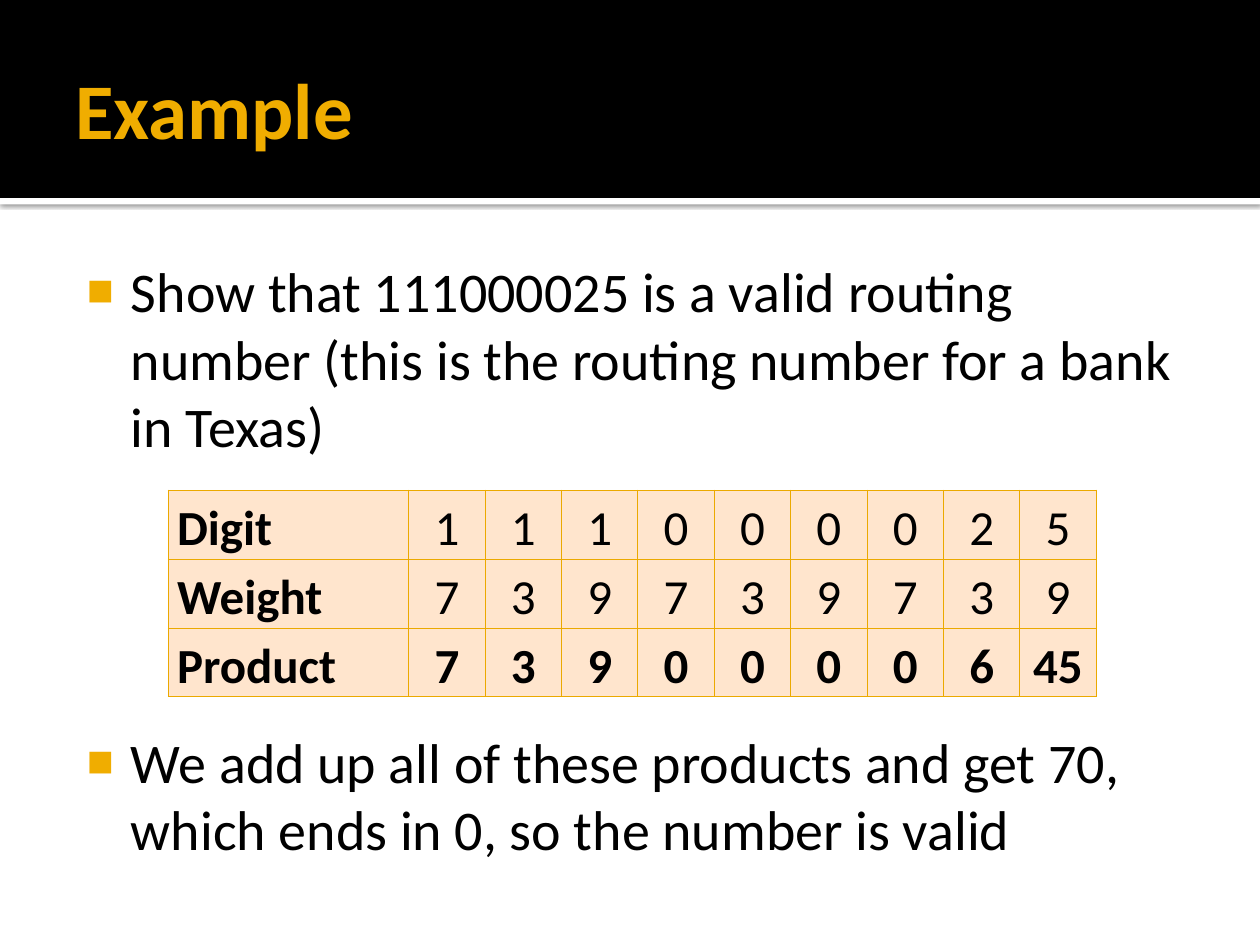
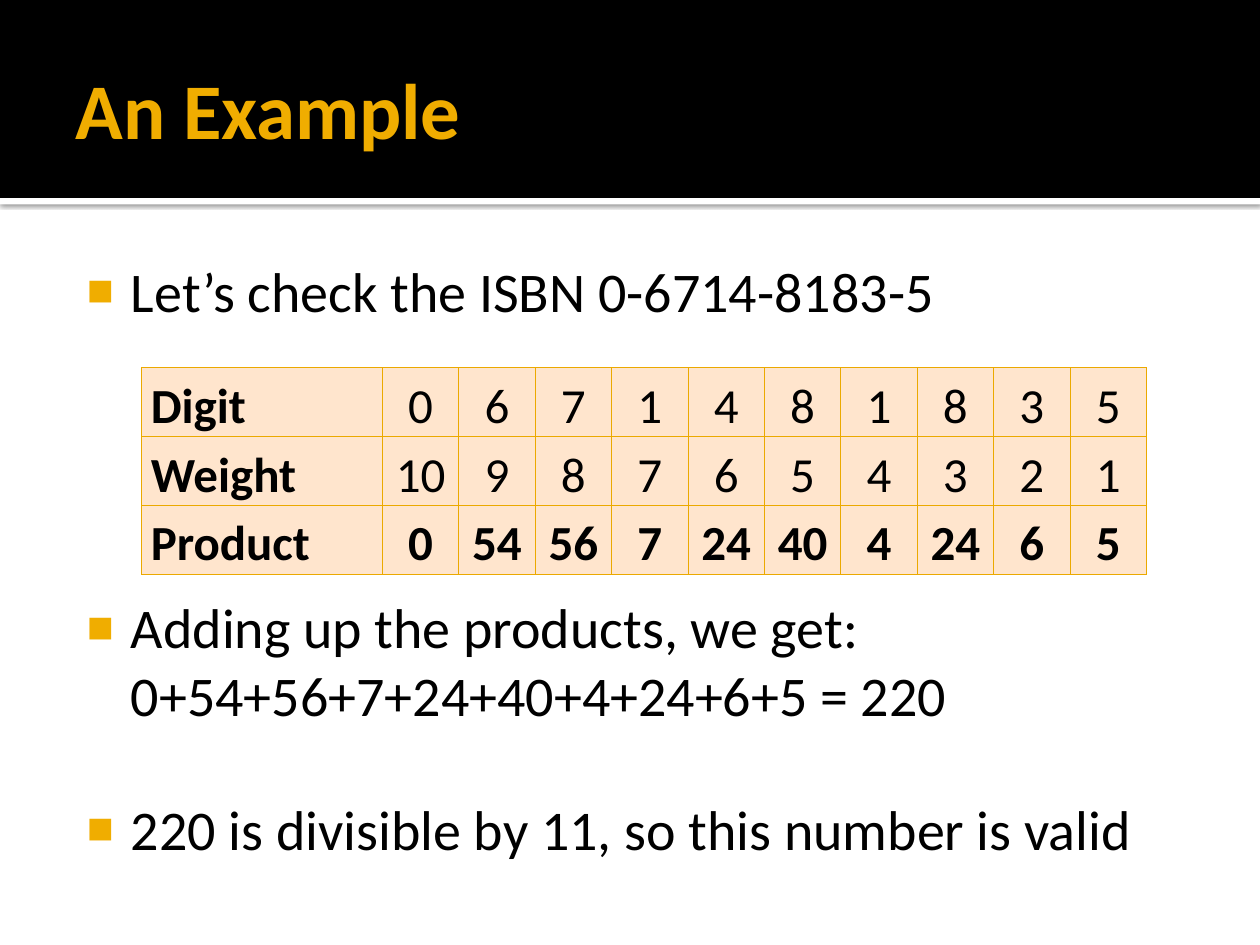
from lxml.etree import SubElement
from pptx import Presentation
from pptx.dml.color import RGBColor
from pptx.enum.shapes import MSO_SHAPE as Preset
from pptx.enum.text import MSO_ANCHOR as Anchor, MSO_AUTO_SIZE as AutoSize, PP_ALIGN as Align
from pptx.oxml.ns import qn
from pptx.util import Cm, Pt

EXAMPLES = [
    {
        "title": "Example",
        "points": [
            ("Show that 111000025 is a valid routing number "
             "(this is the routing number for a bank in Texas)", 0),
            ("We add up all of these products and get 70, "
             "which ends in 0, so the number is valid", 4),
        ],
        "digits": [1, 1, 1, 0, 0, 0, 0, 2, 5],
        "weights": [7, 3, 9] * 3,
        "table_at": (3.39, 9.88),
    },
    {
        "title": "An Example",
        "points": [
            ("Let’s check the ISBN 0-6714-8183-5", 0),
            ("Adding up the products, we get:\v0+54+56+7+24+40+4+24+6+5 = 220", 4),
            ("220 is divisible by 11, so this number is valid", 1),
        ],
        "digits": [0, 6, 7, 1, 4, 8, 1, 8, 3, 5],
        "weights": list(range(10, 0, -1)),
        "table_at": (2.86, 7.41),
    },
]

COLOURS = {
    "band": "000000",
    "rule": "FFFFFF",
    "accent": "F0AD00",
    "text": "000000",
    "cell": "FFE5CD",
    "border": "EBA900",
}
FONT = "Calibri"
SLIDE_W, SLIDE_H = 25.4, 19.05
BAND_H, RULE_H = 3.99, 0.13
TITLE_BOX = (1.27, 0.43, 22.86, 3.48)
BODY_BOX = (1.27, 4.93, 22.86, 12.85)
LABEL_W, DIGIT_W, ROW_H = 4.85, 1.54, 1.38
LINE_PITCH = 38.4

TITLE_FRAME = {
    "word_wrap": True, "auto_size": AutoSize.NONE, "vertical_anchor": Anchor.MIDDLE,
    "margin_left": Cm(0.25), "margin_top": Cm(0.13),
    "margin_right": Cm(0.13), "margin_bottom": Cm(0.13),
}
BODY_FRAME = {
    "word_wrap": True, "auto_size": AutoSize.NONE, "vertical_anchor": Anchor.TOP,
    "margin_left": Cm(0.15), "margin_top": Cm(0.25),
    "margin_right": Cm(0.25), "margin_bottom": Cm(0.13),
}
CELL_FRAME = {
    "margin_left": Cm(0.18), "margin_top": 0,
    "margin_right": Cm(0.18), "margin_bottom": 0,
}


def apply(target, formats):
    for key, value in formats.items():
        setattr(target, key, value)


def rgb(name):
    return RGBColor.from_string(COLOURS[name])


def add_node(parent, tag, **attributes):
    return SubElement(parent, qn(tag), {key: str(value) for key, value in attributes.items()})


def write(paragraph, text, size, colour="text", bold=False):
    paragraph.text = text
    for run in paragraph.runs:
        apply(run.font, {"name": FONT, "size": Pt(size), "bold": bold})
        run.font.color.rgb = rgb(colour)


def add_band(slide, top, height, colour):
    band = slide.shapes.add_shape(Preset.RECTANGLE, 0, Cm(top), Cm(SLIDE_W), Cm(height))
    band.fill.solid()
    band.fill.fore_color.rgb = rgb(colour)
    band.line.fill.background()
    band.shadow.inherit = False
    return band


def add_header(slide, text):
    rule = add_band(slide, BAND_H, RULE_H, "rule")
    effects = rule._element.spPr.find(qn("a:effectLst"))
    shadow = add_node(effects, "a:outerShdw", blurRad=Pt(2.5), dist=Pt(0.8), dir=5400000)
    shade = add_node(shadow, "a:srgbClr", val=COLOURS["band"])
    add_node(shade, "a:alpha", val=60000)
    add_band(slide, 0, BAND_H, "band")

    title = slide.shapes.title
    slide.shapes._spTree.append(title._element)
    apply(title, dict(zip(("left", "top", "width", "height"), map(Cm, TITLE_BOX))))
    apply(title.text_frame, TITLE_FRAME)
    heading = title.text_frame.paragraphs[0]
    write(heading, text, 45, "accent", True)
    heading.alignment = Align.LEFT


def add_points(slide, points):
    frame = slide.shapes.add_textbox(*map(Cm, BODY_BOX)).text_frame
    apply(frame, BODY_FRAME)
    for index, (text, lines_before) in enumerate(points):
        point = frame.add_paragraph() if index else frame.paragraphs[0]
        write(point, text, 32)
        layout = point._p.get_or_add_pPr()
        apply_indent = {"marL": Cm(1.22), "indent": Cm(-0.89)}
        for key, value in apply_indent.items():
            layout.set(key, str(value))
        colour = add_node(layout, "a:buClr")
        add_node(colour, "a:srgbClr", val=COLOURS["accent"])
        add_node(layout, "a:buSzPct", val=80000)
        add_node(layout, "a:buFont", typeface="Arial")
        add_node(layout, "a:buChar", char="■")
        apply(point, {"line_spacing": Pt(LINE_PITCH),
                      "space_before": Pt(LINE_PITCH * lines_before)})


def style_cell(cell):
    apply(cell, CELL_FRAME)
    properties = cell._tc.get_or_add_tcPr()
    for side in ("a:lnL", "a:lnR", "a:lnT", "a:lnB"):
        border = add_node(properties, side, w=Pt(0.5))
        fill = add_node(border, "a:solidFill")
        add_node(fill, "a:srgbClr", val=COLOURS["border"])
    cell.fill.solid()
    cell.fill.fore_color.rgb = rgb("cell")


def add_products(slide, digits, weights, position):
    rows = [
        ["Digit", *digits],
        ["Weight", *weights],
        ["Product", *(digit * weight for digit, weight in zip(digits, weights))],
    ]
    widths = [LABEL_W] + [DIGIT_W] * len(digits)
    table = slide.shapes.add_table(
        len(rows), len(widths), *map(Cm, position),
        Cm(sum(widths)), Cm(ROW_H * len(rows))).table
    for column, width in zip(table.columns, widths):
        column.width = Cm(width)
    for r, values in enumerate(rows):
        table.rows[r].height = Cm(ROW_H)
        for c, value in enumerate(values):
            cell = table.cell(r, c)
            style_cell(cell)
            entry = cell.text_frame.paragraphs[0]
            write(entry, str(value), 28, bold=c == 0 or values[0] == "Product")
            apply(entry, {"line_spacing": 1.15,
                          "alignment": Align.CENTER if c else Align.LEFT})


def main():
    deck = Presentation()
    apply(deck, {"slide_width": Cm(SLIDE_W), "slide_height": Cm(SLIDE_H)})
    for example in EXAMPLES:
        slide = deck.slides.add_slide(deck.slide_layouts[5])
        add_header(slide, example["title"])
        add_points(slide, example["points"])
        add_products(slide, example["digits"], example["weights"], example["table_at"])
    deck.save("out.pptx")


if __name__ == "__main__":
    main()
